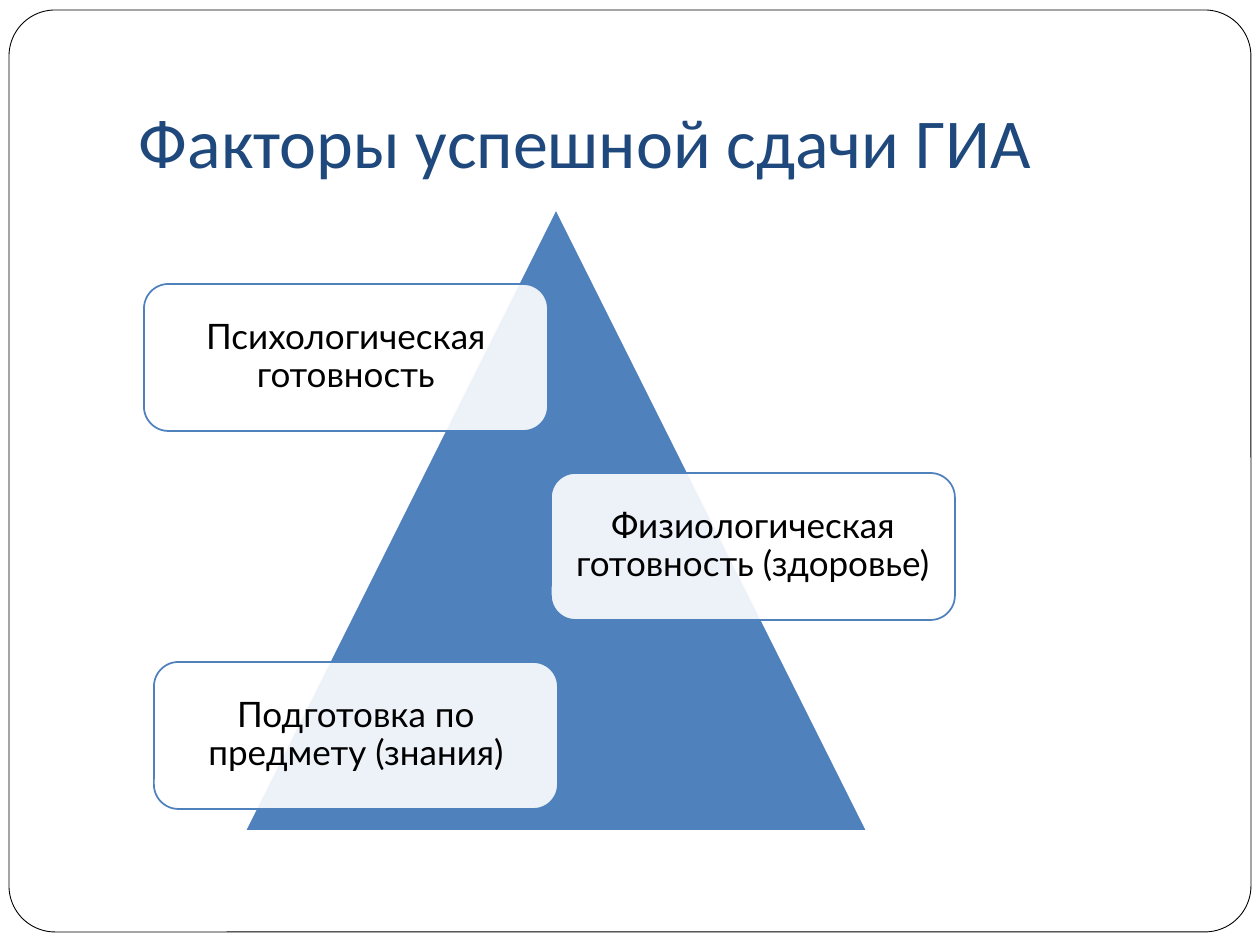
import pptx
import pptx.dml.color
import pptx.enum.shapes
import pptx.enum.text
import pptx.oxml
import pptx.util

RGBColor = pptx.dml.color.RGBColor
MSO_SHAPE = pptx.enum.shapes.MSO_SHAPE
MSO_ANCHOR = pptx.enum.text.MSO_ANCHOR
PP_ALIGN = pptx.enum.text.PP_ALIGN

WHITE = RGBColor(0xFF, 0xFF, 0xFF)
BLACK = RGBColor(0x00, 0x00, 0x00)
BLUE = RGBColor(0x4F, 0x81, 0xBD)
NAVY = RGBColor(0x1F, 0x49, 0x7D)

PX_PER_INCH = 126
FACTOR_WIDTH, FACTOR_HEIGHT = 404, 147
FACTOR_TOP, FACTOR_STEP = 284, 189
FACTORS = [
    (144, "Психологическая готовность"),
    (551, "Физиологическая готовность (здоровье)"),
    (154, "Подготовка по предмету (знания)"),
]


def px(length):
    return pptx.util.Emu(round(length * 914400 / PX_PER_INCH))


def add_shape(slide, kind, box, fill, line, line_width):
    shape = slide.shapes.add_shape(kind, *map(px, box))
    shape.shadow.inherit = False
    shape.fill.solid()
    shape.fill.fore_color.rgb = fill
    shape.line.color.rgb = line
    shape.line.width = pptx.util.Pt(line_width)
    return shape


def set_opacity(shape, percent):
    color = shape.fill._xPr.find(".//" + pptx.oxml.ns.qn("a:srgbClr"))
    alpha = pptx.oxml.xmlchemy.OxmlElement("a:alpha")
    alpha.set("val", str(percent * 1000))
    color.append(alpha)


def write_text(shape, text, font, size, color, anchor, margins):
    """Fill the shape with one paragraph; margins are left, top, right, bottom."""
    frame = shape.text_frame
    frame.word_wrap = True
    frame.vertical_anchor = anchor
    (frame.margin_left, frame.margin_top,
     frame.margin_right, frame.margin_bottom) = map(px, margins)
    frame.text = text
    paragraph = frame.paragraphs[0]
    run_font = paragraph.runs[0].font
    run_font.name = font
    run_font.size = pptx.util.Pt(size)
    run_font.color.rgb = color
    return paragraph


def add_title(slide, text):
    title = slide.shapes.add_textbox(px(126), px(38), px(1071), px(157))
    write_text(title, text, "Calibri", 40, NAVY, MSO_ANCHOR.BOTTOM, (13, 6, 13, 13))


def add_factor(slide, left, top, text):
    box = (left, top, FACTOR_WIDTH, FACTOR_HEIGHT)
    factor = add_shape(slide, MSO_SHAPE.ROUNDED_RECTANGLE, box, WHITE, BLUE, 1)
    set_opacity(factor, 90)
    paragraph = write_text(factor, text, "Lato", 20, BLACK, MSO_ANCHOR.MIDDLE, (10,) * 4)
    paragraph.alignment = PP_ALIGN.CENTER
    paragraph.line_spacing = 0.9


def main():
    presentation = pptx.Presentation()
    presentation.slide_width = px(1260)
    presentation.slide_height = px(945)
    slide = presentation.slides.add_slide(presentation.slide_layouts[6])

    frame = add_shape(slide, MSO_SHAPE.ROUNDED_RECTANGLE, (9, 10, 1242, 922),
                      WHITE, BLACK, 0.5)
    frame.adjustments[0] = 0.05
    add_title(slide, "Факторы успешной сдачи ГИА")
    add_shape(slide, MSO_SHAPE.ISOSCELES_TRIANGLE, (245, 209, 622, 622), BLUE, WHITE, 1)
    for row, (left, text) in enumerate(FACTORS):
        add_factor(slide, left, FACTOR_TOP + row * FACTOR_STEP, text)

    presentation.save("out.pptx")


if __name__ == "__main__":
    main()
